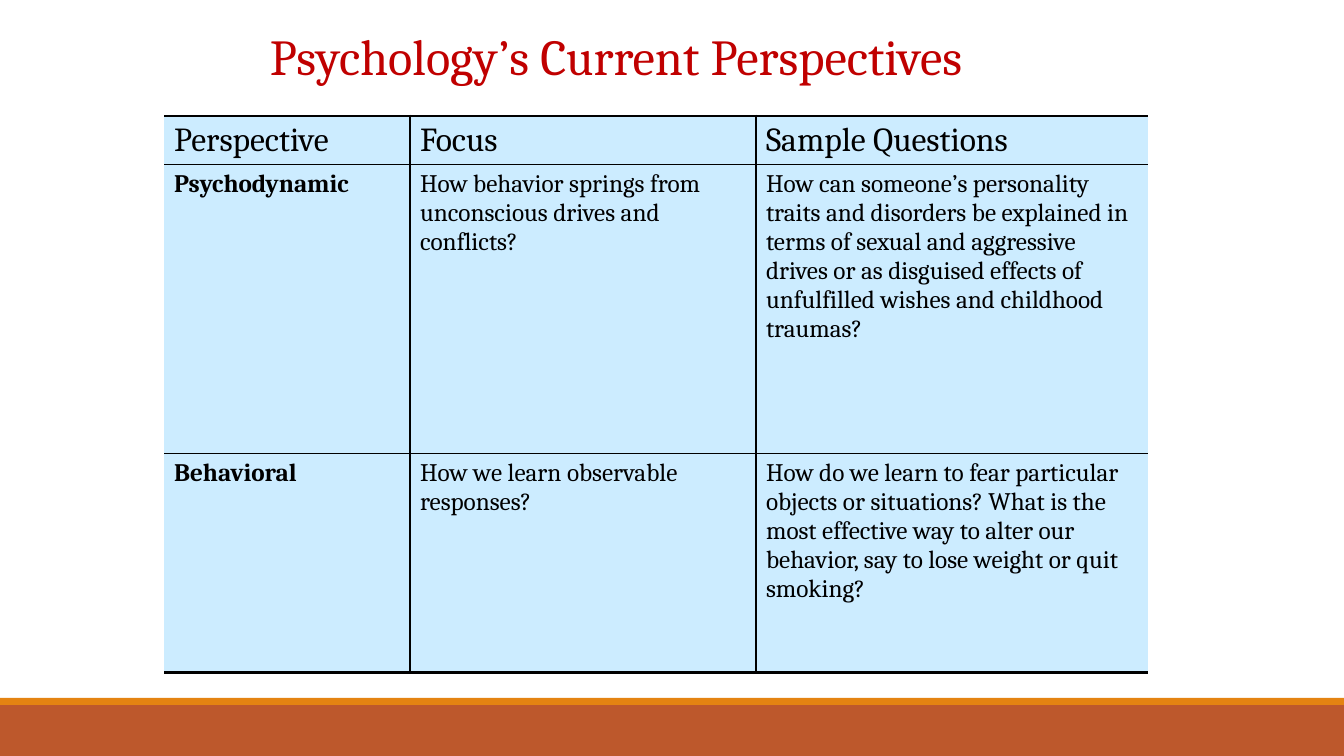
from dataclasses import dataclass

from lxml.etree import SubElement
from pptx import Presentation
from pptx.dml.color import RGBColor
from pptx.enum.shapes import MSO_SHAPE
from pptx.enum.text import MSO_ANCHOR, MSO_AUTO_SIZE, PP_ALIGN
from pptx.oxml.ns import qn
from pptx.util import Emu, Pt

EMU_PER_INCH = 914400
PX_PER_INCH = 100.8


@dataclass(frozen=True)
class Theme:
    font: str = "Cambria"
    title_color: str = "C00000"
    text_color: str = "000000"
    cell_color: str = "CCECFF"
    stripe_color: str = "E48312"
    footer_color: str = "BD582C"
    title_size: int = 36
    header_size: int = 24
    body_size: int = 18
    thin_line: float = 1
    thick_line: float = 2.25


THEME = Theme()

ROWS = [
    ("Perspective", "Focus", "Sample Questions"),
    (
        "Psychodynamic",
        "How behavior springs from unconscious drives and conflicts?",
        "How can someone’s personality traits and disorders be explained in terms of "
        "sexual and aggressive drives or as disguised effects of unfulfilled wishes "
        "and childhood traumas?",
    ),
    (
        "Behavioral",
        "How we learn observable responses?",
        "How do we learn to fear particular objects or situations? What is the most "
        "effective way to alter our behavior, say to lose weight or quit smoking?",
    ),
]
COLUMN_WIDTHS = (246, 346, 392)
ROW_HEIGHTS = (48, 289, 219)


def px(length):
    return Emu(round(length * EMU_PER_INCH / PX_PER_INCH))


def write_text(text_frame, text, size, color, bold=False):
    paragraph = text_frame.paragraphs[0]
    paragraph.alignment = PP_ALIGN.LEFT
    run = paragraph.add_run()
    run.text = text
    formats = {"name": THEME.font, "size": Pt(size), "bold": bold}
    for name, value in formats.items():
        setattr(run.font, name, value)
    run.font.color.rgb = RGBColor.from_string(color)


def draw_borders(cell, widths):
    """Set the cell's four borders; a width of 0 leaves that side open."""
    properties = cell._tc.get_or_add_tcPr()
    for side in ("L", "R", "T", "B"):
        line = SubElement(properties, qn(f"a:ln{side}"), w=str(Pt(widths[side])))
        if widths[side]:
            fill = SubElement(line, qn("a:solidFill"))
            SubElement(fill, qn("a:srgbClr"), val=THEME.text_color)
        else:
            SubElement(line, qn("a:noFill"))


def add_footer(slide, left, top, width, height):
    stripe_height = 7
    bands = [
        (top + stripe_height, height - stripe_height, THEME.footer_color),
        (top, stripe_height, THEME.stripe_color),
    ]
    for band_top, band_height, color in bands:
        band = slide.shapes.add_shape(
            MSO_SHAPE.RECTANGLE, px(left), px(band_top), px(width), px(band_height)
        )
        band.shadow.inherit = False
        band.fill.solid()
        band.fill.fore_color.rgb = RGBColor.from_string(color)
        band.line.fill.background()


def add_perspectives_table(slide, left, top, width, height):
    frame = slide.shapes.add_table(
        len(ROWS), len(COLUMN_WIDTHS), px(left), px(top), px(width), px(height)
    )
    table = frame.table
    table.first_row = False
    table.horz_banding = False
    for column, column_width in zip(table.columns, COLUMN_WIDTHS):
        column.width = px(column_width)
    for row, row_height in zip(table.rows, ROW_HEIGHTS):
        row.height = px(row_height)

    last_row, last_column = len(ROWS) - 1, len(COLUMN_WIDTHS) - 1
    for row_index, texts in enumerate(ROWS):
        for column_index, text in enumerate(texts):
            cell = table.cell(row_index, column_index)
            is_header = row_index == 0
            # Heavy rules above and below, open sides, thin rules inside
            draw_borders(cell, {
                "L": THEME.thin_line if column_index > 0 else 0,
                "R": THEME.thin_line if column_index < last_column else 0,
                "T": THEME.thick_line if is_header else THEME.thin_line,
                "B": THEME.thick_line if row_index == last_row else THEME.thin_line,
            })
            cell.fill.solid()
            cell.fill.fore_color.rgb = RGBColor.from_string(THEME.cell_color)
            cell.vertical_anchor = MSO_ANCHOR.TOP
            write_text(
                cell.text_frame,
                text,
                THEME.header_size if is_header else THEME.body_size,
                THEME.text_color,
                bold=column_index == 0 and not is_header,
            )


def add_title(slide, left, top, width, height):
    box = slide.shapes.add_textbox(px(left), px(top), px(width), px(height))
    box.text_frame.word_wrap = True
    box.text_frame.auto_size = MSO_AUTO_SIZE.SHAPE_TO_FIT_TEXT
    write_text(
        box.text_frame, "Psychology’s Current Perspectives",
        THEME.title_size, THEME.title_color,
    )


def main():
    presentation = Presentation()
    presentation.slide_width = px(1344)
    presentation.slide_height = px(756)
    slide = presentation.slides.add_slide(presentation.slide_layouts[6])

    # Footer bands
    add_footer(slide, 0, 698, 1344, 58)
    # Table of perspectives
    add_perspectives_table(slide, 164, 116, sum(COLUMN_WIDTHS), sum(ROW_HEIGHTS))
    # Title
    add_title(slide, 260, 20, 791, 72)

    presentation.save("out.pptx")


if __name__ == "__main__":
    main()
